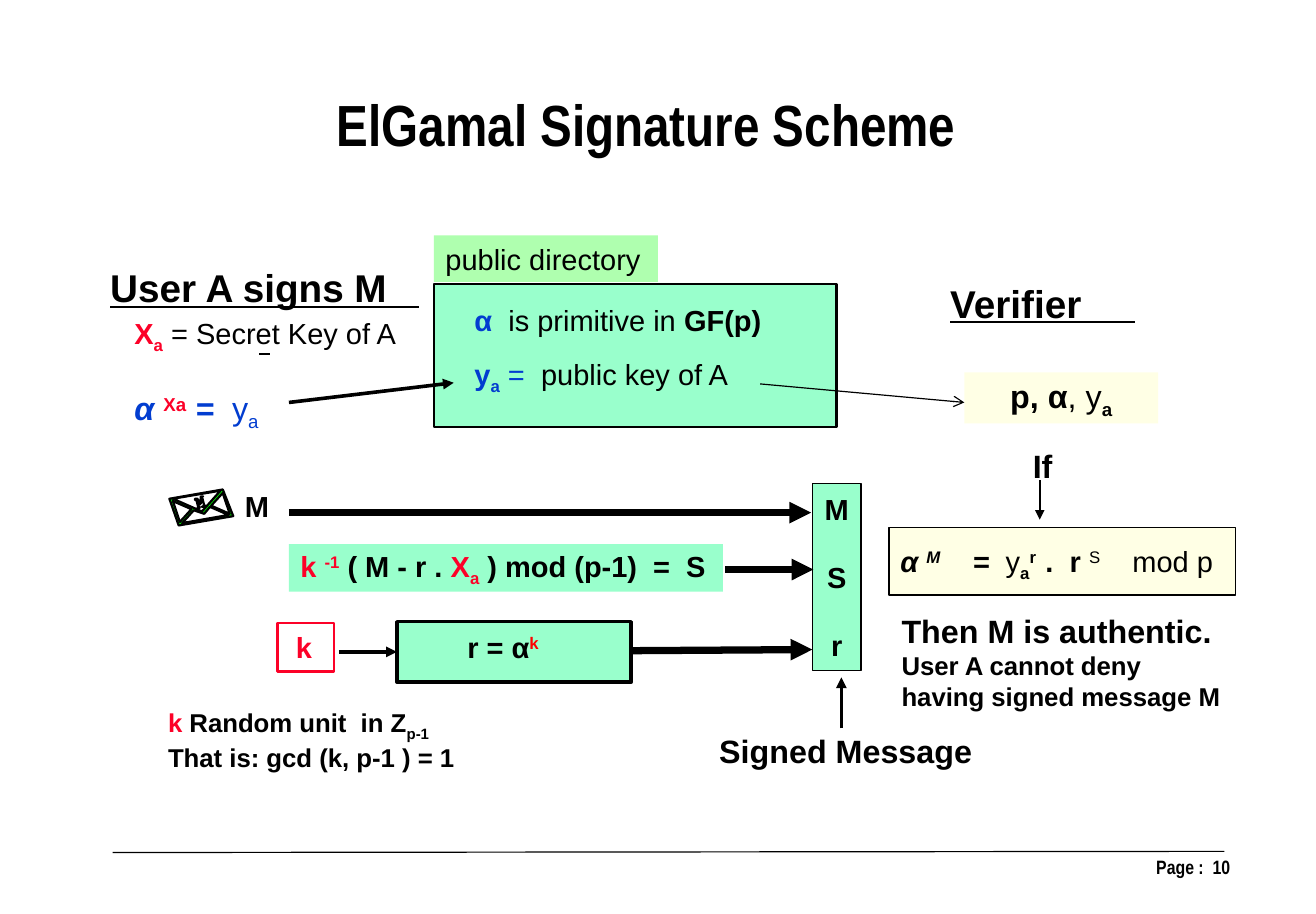
from dataclasses import dataclass

from lxml.etree import SubElement
from pptx import Presentation
from pptx.dml.color import RGBColor
from pptx.enum.shapes import MSO_CONNECTOR, MSO_SHAPE
from pptx.enum.text import MSO_ANCHOR, PP_ALIGN
from pptx.oxml.ns import qn
from pptx.util import Inches, Pt

BLACK, WHITE, RED, BLUE = "000000", "FFFFFF", "FC0128", "023DD0"
MINT, CREAM, GREEN = "99FFCC", "FFFFE5", "AFFFAF"
LEFT, CENTER, RIGHT = PP_ALIGN.LEFT, PP_ALIGN.CENTER, PP_ALIGN.RIGHT
SUB, SUP = -25, 30


@dataclass
class Run:
    text: str
    color: str = BLACK
    size: float = 18
    bold: bool = True
    italic: bool = False
    base: int = 0
    underline: bool = False
    font: str = "Arial"


@dataclass
class Panel:
    box: tuple[float, float, float, float]
    fill: str
    line: str | None = None
    width: float = 0.75


@dataclass
class Label:
    box: tuple[float, float, float, float]
    lines: list[list[Run]]
    align: PP_ALIGN = LEFT
    wrap: bool = True
    gaps: tuple[float, ...] = ()
    anchor: MSO_ANCHOR = MSO_ANCHOR.MIDDLE


@dataclass
class Arrow:
    start: tuple[float, float]
    end: tuple[float, float]
    width: float
    head: str | None = "triangle"


PANELS = [
    Panel((7.66, 4.55, 2.99, 0.58), CREAM, BLACK),
    Panel((3.74, 2.45, 3.47, 1.23), MINT, BLACK, 1.5),
    Panel((2.39, 5.37, 0.49, 0.42), WHITE, RED, 1.5),
    Panel((2.49, 4.69, 3.74, 0.41), MINT),
    Panel((3.42, 5.36, 2.02, 0.52), MINT, BLACK, 2.25),
    Panel((7, 4.17, 0.42, 1.61), MINT, BLACK),
    Panel((3.74, 2.03, 1.93, 0.4), GREEN),
    Panel((8.31, 3.21, 1.67, 0.44), CREAM),
]

ARROWS = [
    Arrow((0.97, 7.35), (10.55, 7.34), 0.75, None),
    Arrow((2.49, 4.42), (6.99, 4.42), 4.5),
    Arrow((6.25, 4.91), (7.01, 4.91), 4.5),
    Arrow((5.43, 5.61), (7, 5.6), 4.5),
    Arrow((2.92, 5.62), (3.42, 5.62), 2.25),
    Arrow((2.49, 3.47), (3.91, 3.3), 2.25),
    Arrow((7.25, 6.28), (7.25, 5.84), 2.25),
    Arrow((8.96, 4.14), (8.96, 4.48), 1.5),
    Arrow((6.55, 3.31), (8.31, 3.47), 0.75, "arrow"),
]

LABELS = [
    Label((8.14, 7.32, 2.56, 0.52), [[Run("Page :  10", size=12, font="Arial Narrow")]],
          RIGHT, anchor=MSO_ANCHOR.TOP),
    Label((0.82, 2.23, 2.92, 0.5), [[Run("User A signs M     ", size=24, underline=True)]],
          CENTER, anchor=MSO_ANCHOR.TOP),
    Label((8.07, 2.36, 1.83, 0.5), [[Run("Verifier     ", size=24, underline=True)]],
          CENTER, anchor=MSO_ANCHOR.TOP),
    Label((1.06, 2.7, 2.5, 1.05), [
        [Run("X", RED), Run("a", RED, base=SUB), Run(" = Secret Key of A", bold=False)],
        [Run("α ", BLUE, 20, italic=True), Run("Xa", RED, 20, base=SUP),
         Run(" =  ", BLUE, 20, italic=True), Run("y", BLUE, 20, False),
         Run("a", BLUE, 20, False, base=SUB)],
    ], gaps=(0, 20.7)),
    Label((3.74, 2.03, 1.93, 0.4), [[Run("public directory", bold=False)]]),
    Label((3.99, 2.55, 2.7, 0.41), [
        [Run("α", BLUE), Run("  is primitive in ", bold=False), Run("GF(p)")]], wrap=False),
    Label((3.99, 2.99, 3.2, 0.51), [
        [Run("y", BLUE), Run("a", BLUE, base=SUB), Run(" = ", BLUE, bold=False),
         Run(" public key of A", bold=False)]]),
    Label((8.31, 3.21, 1.67, 0.44), [
        [Run("p, α", size=20), Run(", y", size=20, bold=False),
         Run("a", size=20, base=SUB)]], CENTER),
    Label((8.8, 3.79, 0.37, 0.44), [[Run("If", size=20)]], CENTER, False),
    Label((2.01, 4.16, 0.41, 0.41), [[Run("M")]], CENTER, False),
    Label((2.49, 4.69, 3.74, 0.41), [
        [Run("k ", RED), Run("-1", RED, base=SUP), Run(" ( M - r . "), Run("X", RED),
         Run("a", RED, base=SUB), Run(" ) mod (p-1)  =  S")]]),
    Label((2.44, 5.38, 0.36, 0.4), [[Run("k", RED)]], CENTER),
    Label((3.25, 5.37, 2.17, 0.41), [
        [Run("r = α"), Run("k", "FF0000", base=SUP)]], CENTER),
    Label((7, 4.17, 0.42, 1.61), [[Run(part)] for part in "MSr"],
          CENTER, False, (0, 20.7, 20.7)),
    Label((7.66, 4.65, 2.99, 0.41), [
        [Run("α ", italic=True), Run("M", italic=True, base=SUP),
         Run("    =  ", italic=True), Run("y", bold=False), Run("a", base=SUB),
         Run("r  ", base=SUP), Run(".  r "), Run("S", bold=False, base=SUP),
         Run("    mod p", bold=False)]], wrap=False),
    Label((7.67, 5.21, 2.98, 0.98), [
        [Run("Then M is authentic.", size=20)],
        [Run("User A cannot deny", size=16)],
        [Run("having signed message M", size=16)]], wrap=False),
    Label((1.35, 6.06, 3.06, 0.64), [
        [Run("k", RED, 16), Run(" Random unit  in Z", size=16),
         Run("p-1", size=16, base=SUB)],
        [Run("That is: gcd (k, p-1 ) = 1", size=16)]]),
    Label((5.92, 6.26, 2.66, 0.43), [[Run(" Signed Message", size=20)]], CENTER),
]

ENVELOPE = [
    [(146, 430), (192, 422), (201, 445), (154, 453)],
    [(149, 430), (174, 441), (190, 423)],
    [(149, 432), (155, 450), (165, 439)],
    [(192, 425), (182, 436), (198, 443)],
    [(167, 440), (157, 451), (197, 444), (181, 437), (176, 443)],
]
ENVELOPE_LETTER = [
    (173, 434), (172, 435), (170, 430), (171, 438), (172, 437), (172, 438), (170, 439),
    (170, 438), (171, 438), (169, 430), (169, 431), (168, 431), (168, 430), (170, 430),
    (173, 434), (173, 428), (175, 428), (174, 428), (176, 436), (177, 436), (175, 437),
    (174, 437), (176, 436), (174, 429),
]


def rgb(value: str) -> RGBColor:
    return RGBColor.from_string(value)


def paint(shape, fill: str | None, line: str | None, width: float) -> None:
    shape.shadow.inherit = False
    if fill:
        shape.fill.solid()
        shape.fill.fore_color.rgb = rgb(fill)
    else:
        shape.fill.background()
    if line:
        shape.line.color.rgb = rgb(line)
        shape.line.width = Pt(width)
    else:
        shape.line.fill.background()


def draw_panel(slide, panel: Panel) -> None:
    shape = slide.shapes.add_shape(MSO_SHAPE.RECTANGLE, *map(Inches, panel.box))
    paint(shape, panel.fill, panel.line, panel.width)


def draw_outline(slide, contours: list, fill: str | None, line: str | None) -> None:
    builder = slide.shapes.build_freeform(*contours[0][0], scale=Inches(0.01))
    builder.add_line_segments(contours[0][1:], close=True)
    for contour in contours[1:]:
        builder.move_to(*contour[0])
        builder.add_line_segments(contour[1:], close=True)
    paint(builder.convert_to_shape(), fill, line, 1.38)


def draw_arrow(slide, arrow: Arrow) -> None:
    connector = slide.shapes.add_connector(
        MSO_CONNECTOR.STRAIGHT, *map(Inches, arrow.start + arrow.end))
    connector.line.color.rgb = rgb(BLACK)
    connector.line.width = Pt(arrow.width)
    if arrow.head:
        SubElement(connector.line._get_or_add_ln(), qn("a:tailEnd"), type=arrow.head)
    SubElement(connector._element.spPr, qn("a:effectLst"))


def write(frame, label: Label) -> None:
    frame.word_wrap = label.wrap
    frame.vertical_anchor = label.anchor
    for index, line in enumerate(label.lines):
        paragraph = frame.paragraphs[0] if index == 0 else frame.add_paragraph()
        paragraph.alignment = label.align
        paragraph.space_before = Pt(label.gaps[index] if label.gaps else 0)
        for part in line:
            run = paragraph.add_run()
            run.text = part.text
            font = run.font
            font.name, font.size = part.font, Pt(part.size)
            font.bold, font.italic, font.underline = part.bold, part.italic, part.underline
            font.color.rgb = rgb(part.color)
            if part.base:
                font._element.set("baseline", str(part.base * 1000))


def main() -> None:
    deck = Presentation()
    deck.slide_width, deck.slide_height = Inches(11.34), Inches(7.88)
    slide = deck.slides.add_slide(deck.slide_layouts[5])

    heading = Label((2.05, 0.71, 7.04, 0.71),
                    [[Run("ElGamal Signature Scheme", size=36, font="Arial Narrow")]], CENTER)
    title = slide.shapes.title
    title.left, title.top, title.width, title.height = map(Inches, heading.box)
    write(title.text_frame, heading)

    for panel in PANELS:
        draw_panel(slide, panel)
    draw_outline(slide, ENVELOPE, "00FF00", None)
    for contour in ENVELOPE + [ENVELOPE_LETTER]:
        draw_outline(slide, [contour], None, BLACK)
    for arrow in ARROWS:
        draw_arrow(slide, arrow)
    for label in LABELS:
        write(slide.shapes.add_textbox(*map(Inches, label.box)).text_frame, label)
    deck.save("out.pptx")


if __name__ == "__main__":
    main()
